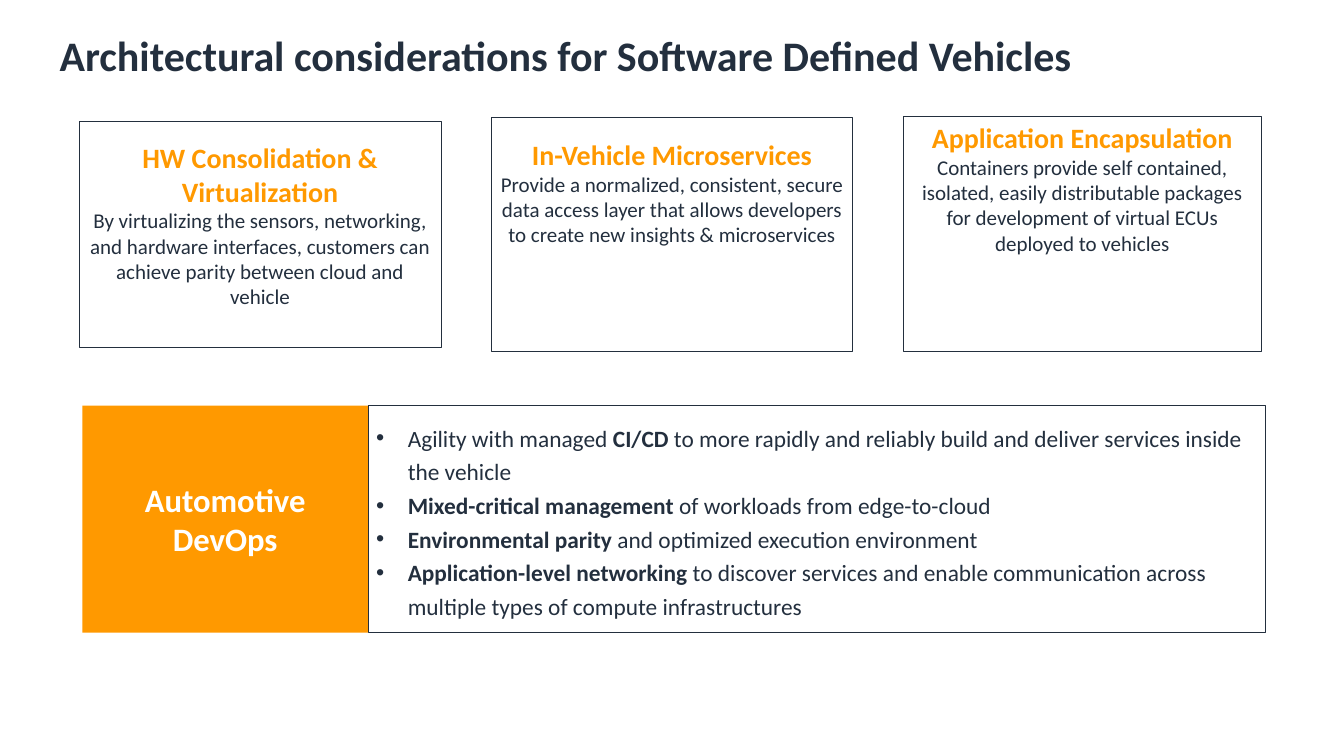
from dataclasses import dataclass

from lxml import etree
from pptx import Presentation
from pptx.dml.color import RGBColor
from pptx.enum.shapes import MSO_SHAPE
from pptx.enum.text import MSO_ANCHOR, MSO_AUTO_SIZE, PP_ALIGN
from pptx.oxml.ns import qn
from pptx.util import Pt

RECT = MSO_SHAPE.RECTANGLE
TOP, MIDDLE = MSO_ANCHOR.TOP, MSO_ANCHOR.MIDDLE
LEFT, CENTER = PP_ALIGN.LEFT, PP_ALIGN.CENTER
NO_FIT = MSO_AUTO_SIZE.NONE


@dataclass(frozen=True)
class Theme:
    """Colours, type sizes and font of the slide."""
    font: str = "Calibri"
    ink: str = "232F3E"
    accent: str = "FF9900"
    white: str = "FFFFFF"
    title: int = 36
    label: int = 28
    head: int = 24
    list: int = 20
    body: int = 18


THEME = Theme()

CARDS = [
    ((67.7, 103.7, 310.3, 194.4), 17, "HW Consolidation & Virtualization",
     "By virtualizing the sensors, networking, and hardware interfaces, "
     "customers can achieve parity between cloud and vehicle"),
    ((421.2, 100.8, 309.6, 200.2), 17, "In-Vehicle Microservices",
     "Provide a normalized, consistent, secure data access layer that allows "
     "developers to create new insights & microservices"),
    ((774, 100.1, 307.4, 200.9), 3.6, "Application Encapsulation",
     "Containers provide self contained, isolated, easily distributable "
     "packages for development of virtual ECUs deployed to vehicles"),
]

POINTS = [
    [("Agility with managed ", False), ("CI/CD ", True),
     ("to more rapidly and reliably build and deliver services inside the vehicle", False)],
    [("Mixed-critical management ", True),
     ("of workloads from edge-to-cloud", False)],
    [("Environmental parity ", True),
     ("and optimized execution environment", False)],
    [("Application-level networking ", True),
     ("to discover services and enable communication across multiple types "
      "of compute infrastructures", False)],
]


def write(para, text, size, color=THEME.ink, bold=False, align=LEFT):
    """Add one formatted run to a paragraph."""
    para.alignment = align
    run = para.add_run()
    run.text = text
    font = run.font
    font.name, font.size, font.bold = THEME.font, Pt(size), bold
    font.color.rgb = RGBColor.from_string(color)


def add_box(slide, box, fill=None, line=None, anchor=MIDDLE):
    """Draw a rectangle and return its text frame."""
    shape = slide.shapes.add_shape(RECT, *map(Pt, box))
    shape.shadow.inherit = False
    if fill:
        shape.fill.solid()
        shape.fill.fore_color.rgb = RGBColor.from_string(fill)
    else:
        shape.fill.background()
    if line:
        shape.line.color.rgb = RGBColor.from_string(line)
        shape.line.width = Pt(0.75)
    else:
        shape.line.fill.background()
    frame = shape.text_frame
    frame.word_wrap = True
    frame.vertical_anchor = anchor
    return frame


def add_bullet(para, indent):
    """Give a paragraph a hanging round bullet."""
    props = para._p.get_or_add_pPr()
    props.set("marL", str(Pt(indent)))
    props.set("indent", str(-Pt(indent)))
    etree.SubElement(props, qn("a:buFont")).set("typeface", "Arial")
    etree.SubElement(props, qn("a:buChar")).set("char", "•")


def add_title(slide, box, text):
    """Place and fill the title."""
    title = slide.shapes.title
    title.left, title.top, title.width, title.height = map(Pt, box)
    frame = title.text_frame
    frame.auto_size = NO_FIT
    frame.vertical_anchor = TOP
    write(frame.paragraphs[0], text, THEME.title, bold=True)


def add_card(slide, box, inset, head, body):
    """Build an outlined card with a heading and a body."""
    frame = add_box(slide, box, THEME.white, THEME.ink, TOP)
    frame.margin_top = Pt(inset)
    write(frame.paragraphs[0], head, THEME.head, THEME.accent, True, CENTER)
    write(frame.add_paragraph(), body, THEME.body, align=CENTER)


def add_panel(slide, box, label, points, split):
    """Build a filled label beside an outlined list."""
    left, top, width, height = box
    frame = add_box(slide, (left, top, split, height), THEME.accent)
    write(frame.paragraphs[0], label, THEME.label, THEME.white, True, CENTER)
    frame = add_box(slide, (left + split, top, width - split, height), line=THEME.ink)
    for index, parts in enumerate(points):
        para = frame.add_paragraph() if index else frame.paragraphs[0]
        add_bullet(para, 27)
        para.line_spacing = 1.2
        for text, bold in parts:
            write(para, text, THEME.list, bold=bold)


def main():
    """Build and save the slide."""
    deck = Presentation()
    deck.slide_width, deck.slide_height = Pt(1152), Pt(648)
    slide = deck.slides.add_slide(deck.slide_layouts[5])
    add_title(slide, (43.9, 21.6, 1064.2, 78.5),
              "Architectural considerations for Software Defined Vehicles")
    add_panel(slide, (70.6, 347.8, 1013.8, 194.4), "Automotive DevOps", POINTS, 244.8)
    for card in CARDS:
        add_card(slide, *card)
    deck.save("out.pptx")


if __name__ == "__main__":
    main()
